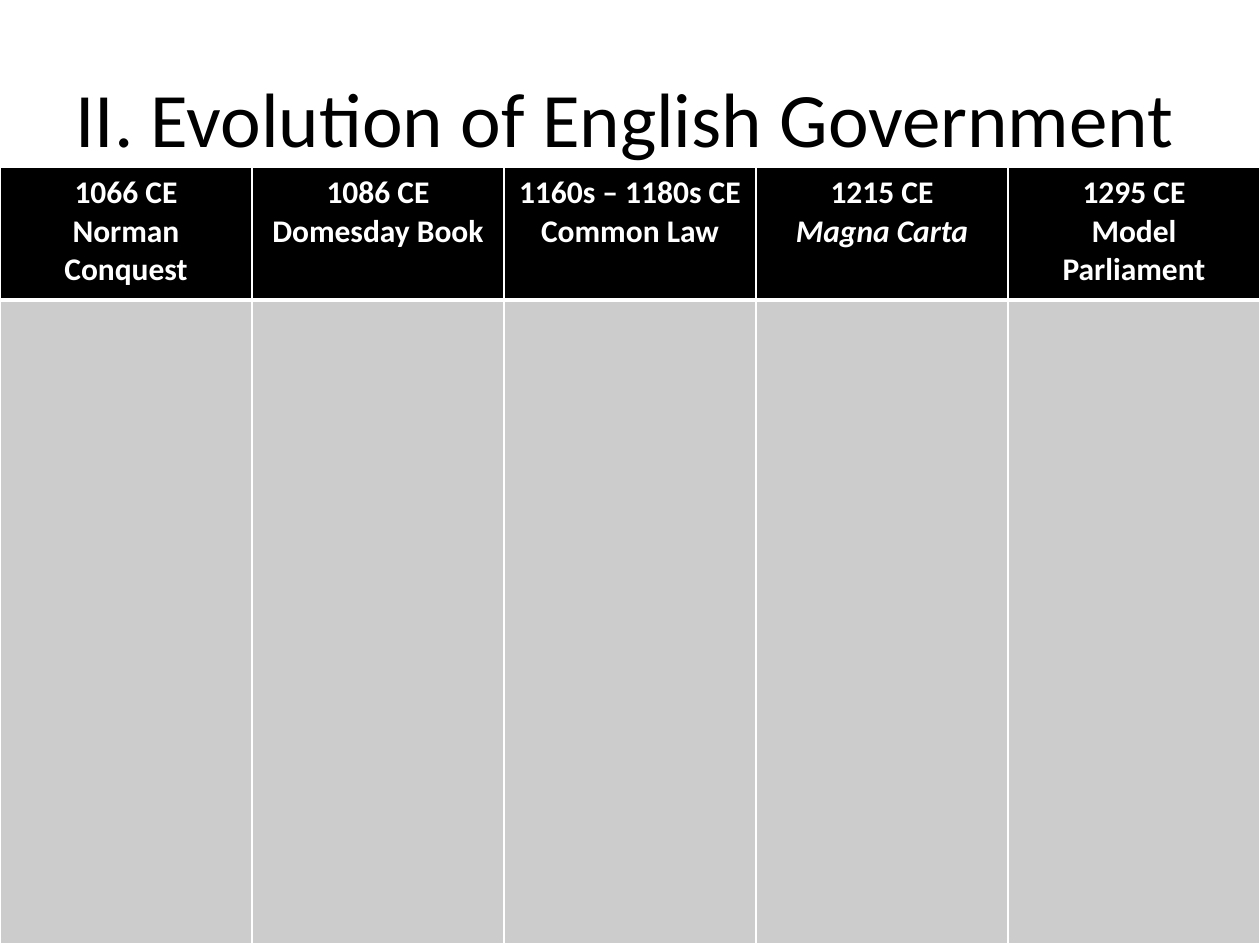
from lxml import etree
from pptx import Presentation
from pptx import util as u
from pptx.dml.color import RGBColor
from pptx.enum import text as t
from pptx.oxml import ns

COLORS = {"ink": "000000", "paper": "FFFFFF", "body": "CCCCCC"}
EVENTS = [
    ("1066 CE", "Norman Conquest"),
    ("1086 CE", "Domesday Book"),
    ("1160s – 1180s CE", "Common Law"),
    ("1215 CE", "Magna Carta"),
    ("1295 CE", "Model Parliament"),
]
ITALIC_EVENTS = {"Magna Carta"}


def write_text(paragraph, content, *, size, color, font="Calibri",
               bold=False, italic=False, align=t.PP_ALIGN.LEFT):
    paragraph.alignment = align
    run = paragraph.add_run()
    run.text = content
    run.font.name = font
    run.font.size = u.Pt(size)
    run.font.bold = bold
    run.font.italic = italic
    run.font.color.rgb = RGBColor.from_string(COLORS[color])


class SlideBuilder:
    def __init__(self, slide):
        self.slide = slide
        self.title_size = 44
        self.header_size = 18
        self.rule_width = 1
        self.header_rule_width = 3

    def title(self, content, left, top, width, height):
        shape = self.slide.shapes.add_textbox(
            u.Inches(left), u.Inches(top), u.Inches(width), u.Inches(height))
        frame = shape.text_frame
        frame.word_wrap = True
        frame.vertical_anchor = t.MSO_ANCHOR.MIDDLE
        write_text(frame.paragraphs[0], content, size=self.title_size, color="ink")

    def style_cell(self, cell, fill, **widths):
        """Fill a cell and draw its borders; widths maps L, R, T, B to points."""
        cell.fill.solid()
        cell.fill.fore_color.rgb = RGBColor.from_string(COLORS[fill])
        properties = cell._tc.get_or_add_tcPr()
        # Border elements must come before the fill.
        for position, side in enumerate("LRTB"):
            line = etree.Element(ns.qn(f"a:ln{side}"))
            line.set("w", str(u.Pt(widths.get(side, self.rule_width))))
            solid = etree.SubElement(line, ns.qn("a:solidFill"))
            etree.SubElement(solid, ns.qn("a:srgbClr"), val=COLORS["paper"])
            properties.insert(position, line)

    def timeline(self, events, left, top, width, row_heights):
        shape = self.slide.shapes.add_table(
            len(row_heights), len(events), u.Inches(left), u.Inches(top),
            u.Inches(width), u.Inches(sum(row_heights)))
        table = shape.table
        for row, height in zip(table.rows, row_heights):
            row.height = u.Inches(height)
        for column, (date, event) in enumerate(events):
            table.columns[column].width = u.Inches(width / len(events))
            header = table.cell(0, column)
            self.style_cell(header, "ink", B=self.header_rule_width)
            self.style_cell(table.cell(1, column), "body", T=self.header_rule_width)
            frame = header.text_frame
            for paragraph, content in ((frame.paragraphs[0], date),
                                       (frame.add_paragraph(), event)):
                write_text(paragraph, content, size=self.header_size,
                           color="paper", bold=True,
                           italic=content in ITALIC_EVENTS,
                           align=t.PP_ALIGN.CENTER)


def main():
    presentation = Presentation()
    presentation.slide_width = u.Inches(10)
    presentation.slide_height = u.Inches(7.5)
    slide = presentation.slides.add_slide(presentation.slide_layouts[6])
    builder = SlideBuilder(slide)
    builder.title("II. Evolution of English Government", 0.5, 0.3, 9, 1.25)
    builder.timeline(EVENTS, 0, 1.33, 10, [1.05, 5.11])
    presentation.save("out.pptx")


if __name__ == "__main__":
    main()
